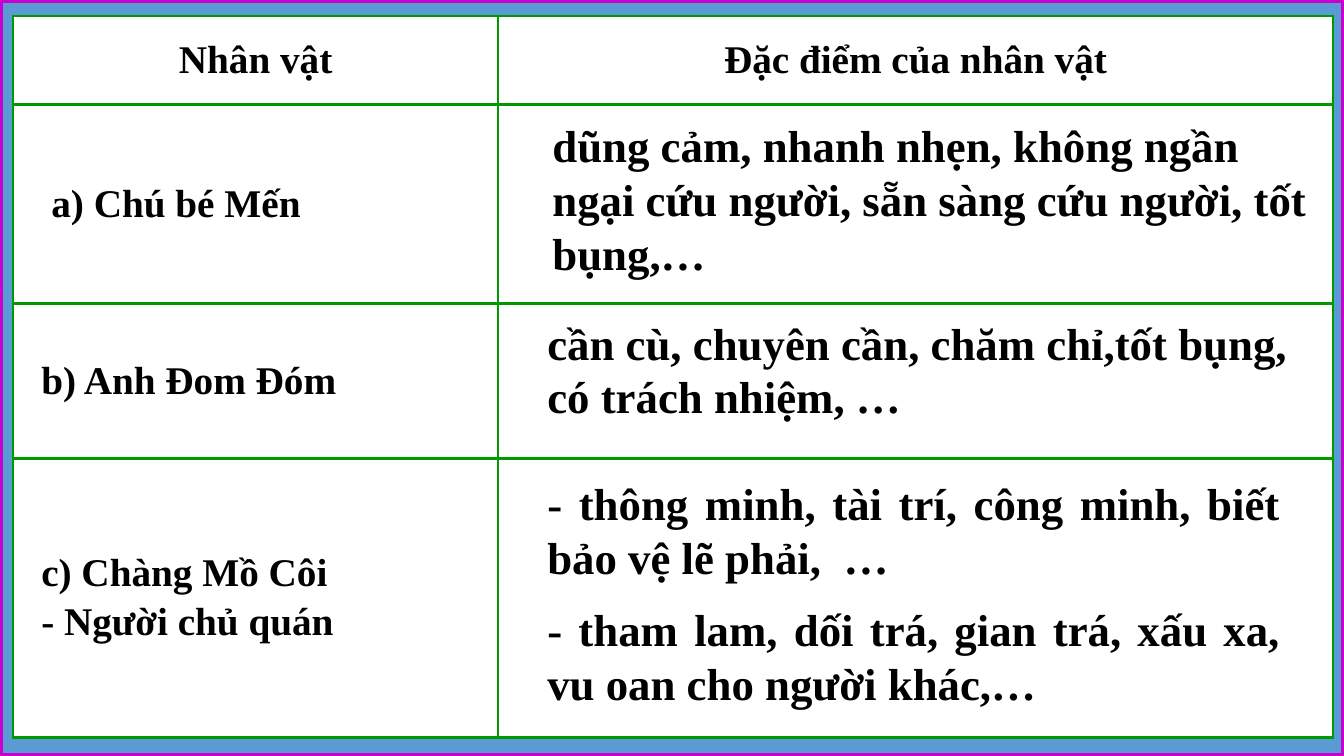
import pptx
import pptx.dml.color
import pptx.enum.shapes
import pptx.enum.text
import pptx.oxml
import pptx.oxml.ns
import pptx.util

Inches = pptx.util.Inches
Pt = pptx.util.Pt
Align = pptx.enum.text.PP_ALIGN

# Content
HEADERS = ["Nhân vật", "Đặc điểm của nhân vật"]
CHARACTERS = [  # lines, left indent of the cell
    (["a) Chú bé Mến"], 0.38),
    (["b) Anh Đom Đóm"], 0.28),
    (["c) Chàng Mồ Côi", "- Người chủ quán"], 0.28),
]
TRAITS = [  # text, left, top, width, height, alignment
    ("dũng cảm, nhanh nhẹn, không ngần ngại cứu người, sẵn sàng cứu người, tốt bụng,…",
     5.38, 1.12, 7.68, 1.72, Align.LEFT),
    ("cần cù, chuyên cần, chăm chỉ,tốt bụng, có trách nhiệm, …",
     5.33, 3.08, 7.72, 1.18, Align.LEFT),
    ("- thông minh, tài trí, công minh, biết bảo vệ lẽ phải,  …",
     5.33, 4.67, 7.47, 1.18, Align.JUSTIFY),
    ("- tham lam, dối trá, gian trá, xấu xa, vu oan cho người khác,…",
     5.33, 5.92, 7.47, 1.18, Align.JUSTIFY),
]
COLUMN_WIDTHS = [4.81, 8.28]
ROW_HEIGHTS = [0.88, 1.97, 1.54, 2.77]

THEME = {
    "font": "Times New Roman",
    "text": "000000",
    "cell": "FFFFFF",
    "backdrop": "5B9BD5",
    "frame": "CC00CC",
    "border": "009900",
    "table_size": 28,
    "trait_size": 32,
    "frame_width": 4.5,
    "border_width": 2.25,
}


def color(name):
    return pptx.dml.color.RGBColor.from_string(THEME[name])


def write_text(text_frame, lines, size, align=Align.LEFT, space_before=0):
    text_frame.word_wrap = True
    for index, line in enumerate(lines):
        paragraph = text_frame.paragraphs[0] if index == 0 else text_frame.add_paragraph()
        paragraph.alignment = align
        paragraph.space_before = Pt(space_before)
        run = paragraph.add_run()
        run.text = line
        run.font.name = THEME["font"]
        run.font.size = Pt(size)
        run.font.bold = True
        run.font.color.rgb = color("text")


def add_borders(cell):
    properties = cell._tc.get_or_add_tcPr()
    for index, side in enumerate(["lnL", "lnR", "lnT", "lnB"]):
        border = pptx.oxml.parse_xml(
            f'<a:{side} {pptx.oxml.ns.nsdecls("a")} w="{Pt(THEME["border_width"])}">'
            f'<a:solidFill><a:srgbClr val="{THEME["border"]}"/></a:solidFill></a:{side}>')
        properties.insert(index, border)


def add_backdrop(slide, width, height):
    backdrop = slide.shapes.add_shape(
        pptx.enum.shapes.MSO_SHAPE.RECTANGLE, 0, 0, width, height)
    backdrop.shadow.inherit = False
    backdrop.fill.solid()
    backdrop.fill.fore_color.rgb = color("backdrop")
    backdrop.line.color.rgb = color("frame")
    backdrop.line.width = Pt(THEME["frame_width"])


def add_character_table(slide):
    table = slide.shapes.add_table(
        len(ROW_HEIGHTS), len(COLUMN_WIDTHS), Inches(0.13), Inches(0.16),
        Inches(sum(COLUMN_WIDTHS)), Inches(sum(ROW_HEIGHTS))).table
    for column, width in zip(table.columns, COLUMN_WIDTHS):
        column.width = Inches(width)
    for row, height in zip(table.rows, ROW_HEIGHTS):
        row.height = Inches(height)
    for cell in table.iter_cells():
        cell.fill.solid()
        cell.fill.fore_color.rgb = color("cell")
        cell.vertical_anchor = pptx.enum.text.MSO_ANCHOR.MIDDLE
        add_borders(cell)
    for index, header in enumerate(HEADERS):
        write_text(table.cell(0, index).text_frame, [header],
                   THEME["table_size"], align=Align.CENTER, space_before=4)
    for index, (lines, indent) in enumerate(CHARACTERS, start=1):
        cell = table.cell(index, 0)
        cell.margin_left = Inches(indent)
        write_text(cell.text_frame, lines, THEME["table_size"], space_before=4)


def main():
    presentation = pptx.Presentation()
    presentation.slide_width = Inches(13.33)
    presentation.slide_height = Inches(7.5)
    slide = presentation.slides.add_slide(presentation.slide_layouts[6])

    # Frame and table
    add_backdrop(slide, presentation.slide_width, presentation.slide_height)
    add_character_table(slide)

    # Traits over the right column
    for text, left, top, width, height, align in TRAITS:
        box = slide.shapes.add_textbox(
            Inches(left), Inches(top), Inches(width), Inches(height))
        write_text(box.text_frame, [text], THEME["trait_size"],
                   align=align, space_before=16)

    presentation.save("out.pptx")


if __name__ == "__main__":
    main()
